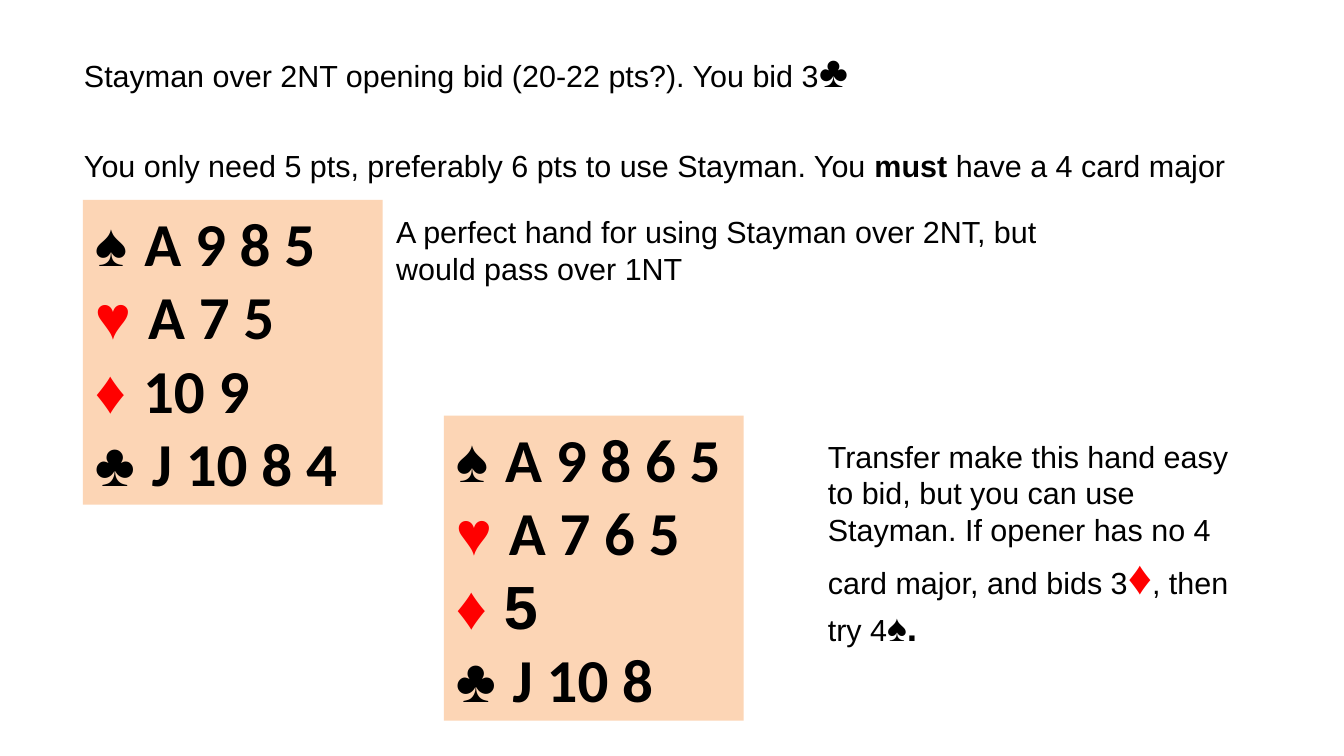
from dataclasses import dataclass

from pptx import Presentation
from pptx.dml.color import RGBColor
from pptx.enum.shapes import MSO_SHAPE
from pptx.enum.text import MSO_ANCHOR, PP_ALIGN
from pptx.util import Pt


@dataclass(frozen=True)
class Theme:
    black: RGBColor = RGBColor(0, 0, 0)
    red: RGBColor = RGBColor(255, 0, 0)
    peach: RGBColor = RGBColor(0xFC, 0xD5, 0xB5)
    sans: str = "Arial"
    card: str = "Calibri"
    body: int = 18
    spade: int = 22
    club: int = 26
    gem: int = 28
    hand: int = 36


THEME = Theme()
RED_SUITS = "♥♦"
HAND_SIZE = (177, 180)


def add_run(para, text, size=THEME.body, bold=False, face=THEME.sans):
    run = para.add_run()
    run.text = text
    font = run.font
    font.name, font.size, font.bold = face, Pt(size), bold
    font.color.rgb = THEME.red if text[0] in RED_SUITS else THEME.black


def add_lines(frame, lines, gap=0):
    """Each line is a list of runs; gap is the space between lines."""
    frame.word_wrap = True
    frame.vertical_anchor = MSO_ANCHOR.TOP
    for i, runs in enumerate(lines):
        para = frame.add_paragraph() if i else frame.paragraphs[0]
        para.alignment = PP_ALIGN.LEFT
        if i and gap:
            para.space_before = Pt(gap)
        for run in runs:
            add_run(para, *run)


def add_note(slide, left, top, width, height, lines, gap=0):
    box = slide.shapes.add_textbox(Pt(left), Pt(top), Pt(width), Pt(height))
    add_lines(box.text_frame, lines, gap)


def add_hand(slide, left, top, cards):
    width, height = HAND_SIZE
    box = slide.shapes.add_shape(
        MSO_SHAPE.RECTANGLE, Pt(left), Pt(top), Pt(width), Pt(height))
    box.shadow.inherit = False
    box.fill.solid()
    box.fill.fore_color.rgb = THEME.peach
    box.line.fill.background()
    lines = []
    for suit, (ranks, face) in zip("♠♥♦♣", cards):
        lines.append([(suit + " ", THEME.hand, True),
                      (ranks, THEME.hand, True, face)])
    add_lines(box.text_frame, lines)


def main():
    deck = Presentation()
    deck.slide_width, deck.slide_height = Pt(793.44), Pt(446.4)
    slide = deck.slides.add_slide(deck.slide_layouts[6])

    # Rule for the bid
    add_note(slide, 42.5, 22.3, 694, 119.5, [
        [("Stayman over 2NT opening bid (20-22 pts?). You bid 3",),
         ("♣", THEME.club, True)],
        [("You only need 5 pts, preferably 6 pts to use Stayman. You ",),
         ("must ", THEME.body, True),
         ("have a 4 card major",)],
    ], gap=30)

    # First hand and its note
    add_hand(slide, 49, 118, [
        ("A 9 8 5", THEME.card), ("A 7 5", THEME.card),
        ("10 9", THEME.card), ("J 10 8 4", THEME.card)])
    add_note(slide, 226.8, 122.4, 411, 47.5, [
        [("A perfect hand for using Stayman over 2NT, "
          "but would pass over 1NT",)]])

    # Second hand and its note
    add_hand(slide, 262, 245.5, [
        ("A 9 8 6 5", THEME.card), ("A 7 6 5", THEME.card),
        ("5", THEME.sans), ("J 10 8", THEME.card)])
    add_note(slide, 481.7, 254.9, 269.3, 128.9, [
        [("Transfer make this hand easy to bid, but you can use Stayman. "
          "If opener has no 4 card major, and bids 3",),
         ("♦", THEME.gem, True),
         (", then try 4",),
         ("♠.", THEME.spade, True)]])

    deck.save("out.pptx")


if __name__ == "__main__":
    main()
